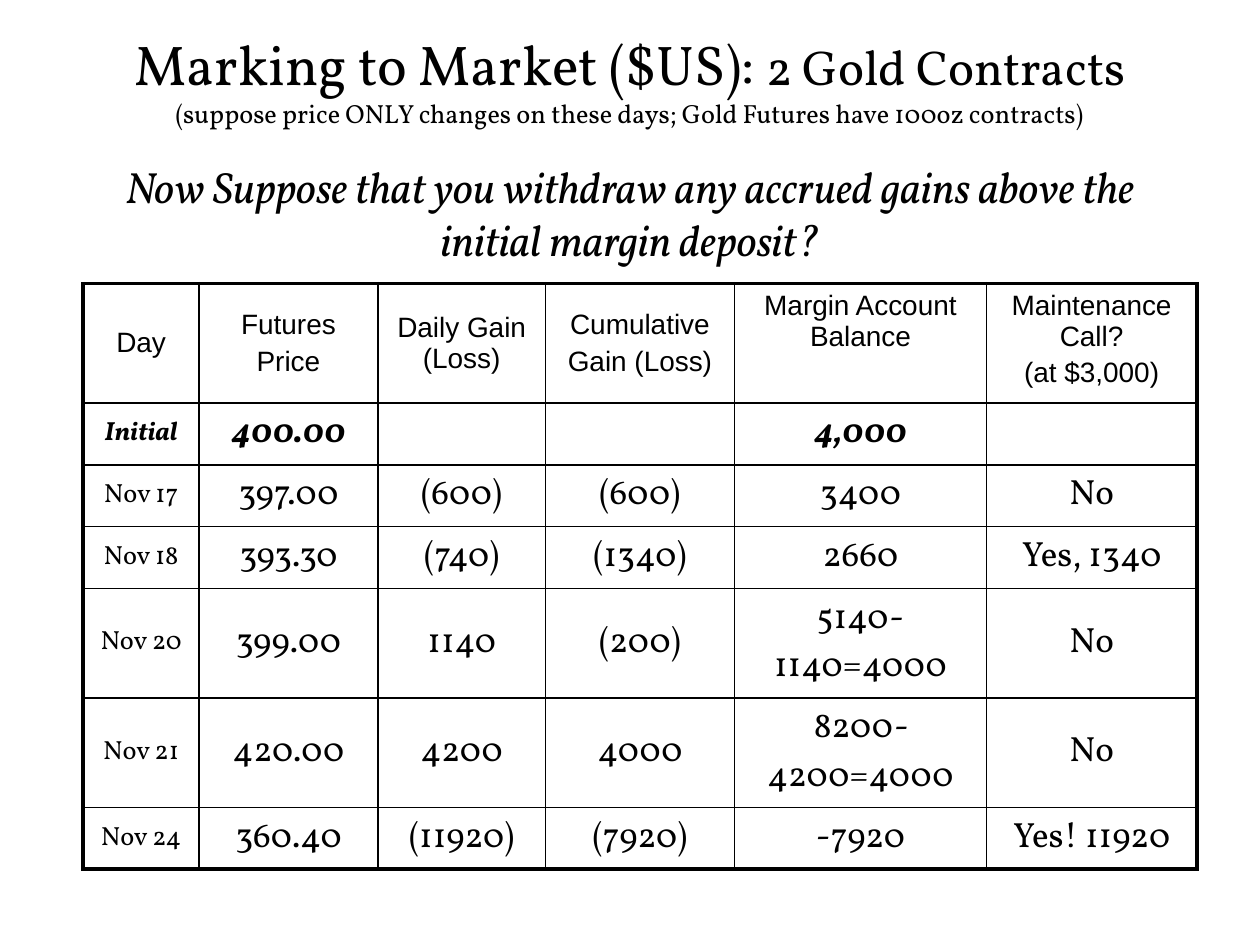
import pptx
import pptx.util
import pptx.dml.color
import pptx.enum.text
import pptx.oxml
import pptx.oxml.ns
from lxml import etree

Inches, Pt = pptx.util.Inches, pptx.util.Pt
ALIGN, ANCHOR = pptx.enum.text.PP_ALIGN, pptx.enum.text.MSO_ANCHOR

# Content
COLORS = {"ink": "000000", "paper": "FFFFFF"}
BODY_FONT, HEADER_FONT = "Vollkorn", "Arial"

# Each title paragraph: space before in points, then runs of (text, size, italic)
TITLE = [
    (0, [("Marking to Market ($US): ", 32, False), ("2 Gold Contracts", 28, False)]),
    (0, [("(suppose price ONLY changes on these days; "
          "Gold Futures have 100oz contracts)", 15, False)]),
    (18, [("Now Suppose that you withdraw any accrued gains above the "
           "initial margin deposit?", 25, True)]),
]
ROWS = [
    ["Day", "Futures\nPrice", "Daily Gain (Loss)", "Cumulative\nGain (Loss)",
     "Margin Account Balance", "Maintenance Call?\n(at $3,000)"],
    ["Initial", "400.00", "", "", "4,000", ""],
    ["Nov 17", "397.00", "(600)", "(600)", "3400", "No"],
    ["Nov 18", "393.30", "(740)", "(1340)", "2660", "Yes, 1340"],
    ["Nov 20", "399.00", "1140", "(200)", "5140-1140=4000", "No"],
    ["Nov 21", "420.00", "4200", "4000", "8200-4200=4000", "No"],
    ["Nov 24", "360.40", "(11920)", "(7920)", "-7920", "Yes! 11920"],
]
COLUMN_WIDTHS = [0.92, 1.42, 1.33, 1.5, 2, 1.67]
HEADER_HEIGHT, SINGLE, DOUBLE = 0.95, 0.49, 0.87
ROW_HEIGHTS = [HEADER_HEIGHT, SINGLE, SINGLE, SINGLE, DOUBLE, DOUBLE, SINGLE]
TOP_ANCHORED_HEADERS = (4, 5)
OUTER_LINE, INNER_LINE = 2.25, 1


def add_run(para, text, size, font, bold=False, italic=False):
    span = para.add_run()
    span.text = text
    span.font.size = Pt(size)
    span.font.name = font
    span.font.bold = bold
    span.font.italic = italic
    span.font.color.rgb = pptx.dml.color.RGBColor.from_string(COLORS["ink"])


def set_borders(cell, widths):
    """Draw the left, right, top and bottom lines, ahead of the cell fill."""
    properties = cell._tc.get_or_add_tcPr()
    for place, (side, width) in enumerate(widths.items()):
        line = etree.Element(pptx.oxml.ns.qn("a:ln" + side), w=str(int(Pt(width))))
        fill = etree.SubElement(line, pptx.oxml.ns.qn("a:solidFill"))
        etree.SubElement(fill, pptx.oxml.ns.qn("a:srgbClr"), val=COLORS["ink"])
        properties.insert(place, line)


def fill_cell(cell, text, row, column):
    header = row == 0
    initial = row == 1
    size = 16 if header else 15 if column == 0 else 20
    top = header and column in TOP_ANCHORED_HEADERS
    cell.vertical_anchor = ANCHOR.TOP if top else ANCHOR.MIDDLE
    cell.margin_left = cell.margin_right = Inches(0.1)
    cell.margin_top = cell.margin_bottom = Inches(0.05)
    cell.fill.background()
    for index, line in enumerate(text.split("\n")):
        frame = cell.text_frame
        para = frame.add_paragraph() if index else frame.paragraphs[0]
        para.alignment = ALIGN.CENTER
        para.space_before = Pt(0.2 * size)
        if line:
            add_run(para, line, size, HEADER_FONT if header else BODY_FONT,
                    initial, initial)


# Page
deck = pptx.Presentation()
deck.slide_width, deck.slide_height = Inches(10), Inches(7.5)
page = deck.slides.add_slide(deck.slide_layouts[6])
page.background.fill.solid()
page.background.fill.fore_color.rgb = pptx.dml.color.RGBColor.from_string(COLORS["paper"])

# Title
box = page.shapes.add_textbox(Inches(0.75), Inches(0.67), Inches(8.5), Inches(1))
frame = box.text_frame
frame.word_wrap = True
frame.vertical_anchor = ANCHOR.MIDDLE
for index, (gap, runs) in enumerate(TITLE):
    para = frame.add_paragraph() if index else frame.paragraphs[0]
    para.alignment = ALIGN.CENTER
    para.space_before = Pt(gap)
    for text, size, italic in runs:
        add_run(para, text, size, BODY_FONT, italic=italic)

# Margin account table
table = page.shapes.add_table(
    len(ROWS), len(COLUMN_WIDTHS), Inches(0.66), Inches(2.25),
    Inches(sum(COLUMN_WIDTHS)), Inches(sum(ROW_HEIGHTS))).table
table.first_row = table.horz_banding = False
for column, width in zip(table.columns, COLUMN_WIDTHS):
    column.width = Inches(width)
for row, height in zip(table.rows, ROW_HEIGHTS):
    row.height = Inches(height)

last_row, last_column = len(ROWS) - 1, len(COLUMN_WIDTHS) - 1
for r, texts in enumerate(ROWS):
    for c, text in enumerate(texts):
        cell = table.cell(r, c)
        fill_cell(cell, text, r, c)
        edges = {"L": c == 0, "R": c == last_column, "T": r == 0, "B": r == last_row}
        set_borders(cell, {side: OUTER_LINE if outer else INNER_LINE
                           for side, outer in edges.items()})

deck.save("out.pptx")
